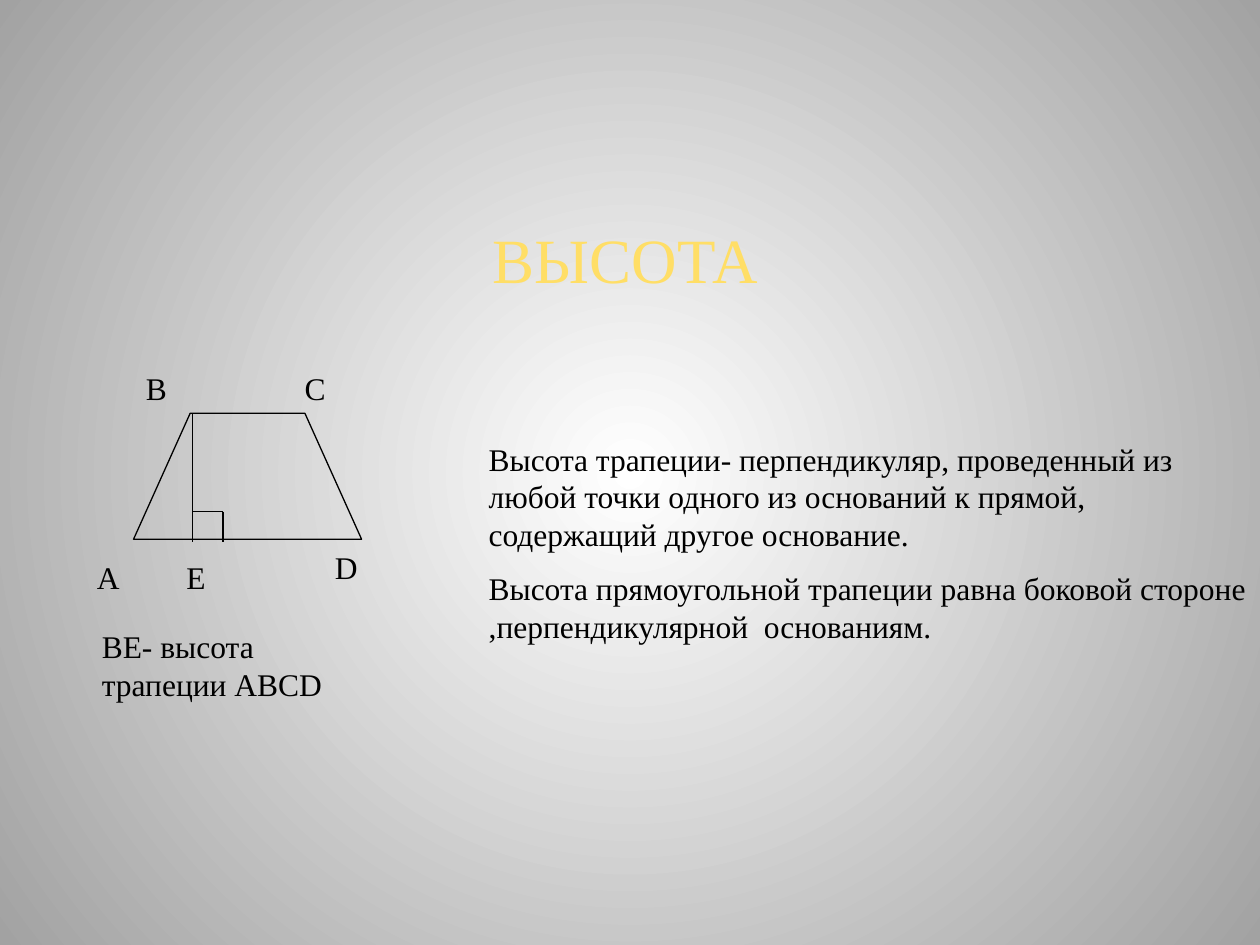
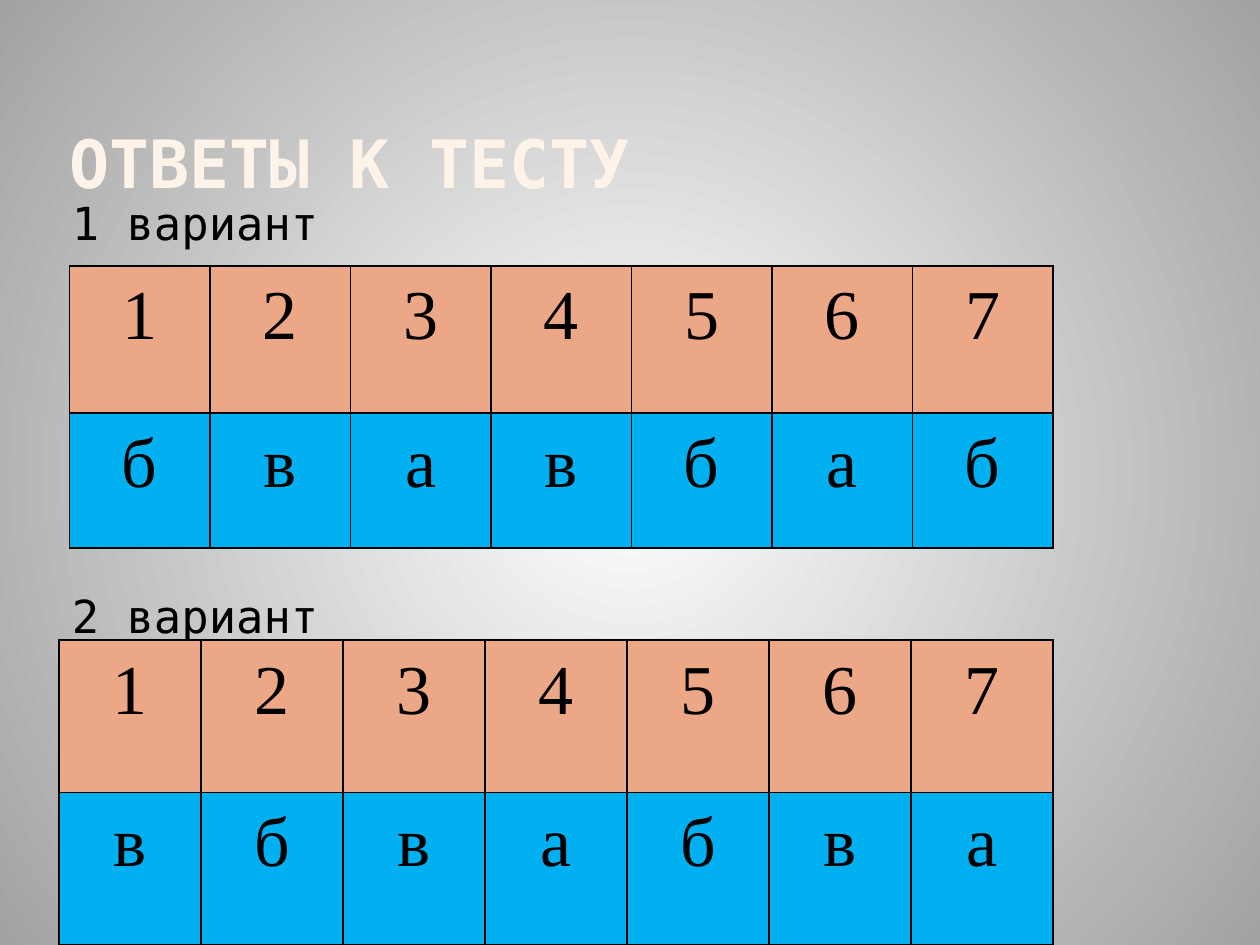
from dataclasses import dataclass

from lxml import etree
from pptx import Presentation
from pptx.dml.color import RGBColor
from pptx.enum.shapes import MSO_CONNECTOR
from pptx.enum.text import MSO_ANCHOR, MSO_AUTO_SIZE, PP_ALIGN
from pptx.oxml.ns import qn
from pptx.util import Inches, Pt

STRAIGHT = MSO_CONNECTOR.STRAIGHT
LEFT, CENTER = PP_ALIGN.LEFT, PP_ALIGN.CENTER
TOP, BOTTOM = MSO_ANCHOR.TOP, MSO_ANCHOR.BOTTOM
NO_FIT, GROW = MSO_AUTO_SIZE.NONE, MSO_AUTO_SIZE.SHAPE_TO_FIT_TEXT
TITLE_AND_CONTENT, TITLE_ONLY = 1, 5

# The slide is a grid of 100 columns by 75 rows
COLUMNS, ROWS = 100, 75
UNIT = Inches(0.1)


@dataclass(frozen=True)
class Theme:
    serif: str = "Times New Roman"
    mono: str = "DejaVu Sans Mono"
    ink: str = "000000"
    heading: str = "FFDE66"
    number_fill: str = "EBA786"
    answer_fill: str = "00B0F0"
    background: tuple = ((0, "FFFFFF"), (100, "A2A2A2"))
    shine: tuple = ((0, "FEF7F1"), (10, "FEF3E8"), (49, "FBCF9C"),
                    (50, "F9B94C"), (100, "FEF3E8"))
    text_size: int = 18
    heading_size: int = 36
    title_size: int = 38
    list_size: int = 26
    cell_size: int = 40
    thin: float = 0.75
    border: float = 1


THEME = Theme()


def grid(*lengths):
    """Turn grid units into slide lengths."""
    return [round(length * UNIT) for length in lengths]


def child(parent, tag, **attributes):
    return etree.SubElement(parent, qn(tag), attributes)


# Paint and type
def paint_gradient(owner, fill, stops, radial=False):
    fill.gradient()
    gradient = owner.find(".//" + qn("a:gradFill"))
    for part in list(gradient):
        gradient.remove(part)
    stop_list = child(gradient, "a:gsLst")
    for position, color in stops:
        stop = child(stop_list, "a:gs", pos=str(position * 1000))
        child(stop, "a:srgbClr", val=color)
    if radial:
        path = child(gradient, "a:path", path="circle")
        child(path, "a:fillToRect", l="50000", t="50000", r="50000", b="50000")
    else:
        child(gradient, "a:lin", ang="5400000", scaled="0")


def style_font(font, name, size, color=THEME.ink, bold=False):
    font.name, font.size, font.bold = name, Pt(size), bold
    font.color.rgb = RGBColor.from_string(color)


def write(text_frame, lines, name, size, color=THEME.ink, align=LEFT, gap=0, bold=False):
    """Fill a frame with one paragraph per line, with a gap between them."""
    text_frame.text = "\n".join(lines)
    for index, paragraph in enumerate(text_frame.paragraphs):
        paragraph.alignment = align
        paragraph.space_before = Pt(gap if index else 0)
        for run in paragraph.runs:
            style_font(run.font, name, size, color, bold)


# Kinds of element
def place(shape, left, top, width, height):
    shape.left, shape.top, shape.width, shape.height = grid(left, top, width, height)


def add_title(slide, text, box, name, size, color=THEME.ink, align=LEFT,
              anchor=TOP, wrap=True, bold=False):
    title = slide.shapes.title
    place(title, *box)
    frame = title.text_frame
    frame.auto_size, frame.word_wrap, frame.vertical_anchor = NO_FIT, wrap, anchor
    write(frame, [text], name, size, color, align, bold=bold)
    return title


def add_text(shapes, lines, box):
    frame = shapes.add_textbox(*grid(*box)).text_frame
    frame.word_wrap, frame.auto_size = True, GROW
    write(frame, lines, THEME.serif, THEME.text_size, gap=THEME.text_size / 2)


def add_line(shapes, start, end):
    line = shapes.add_connector(STRAIGHT, *grid(*start, *end))
    line.line.color.rgb = RGBColor.from_string(THEME.ink)
    line.line.width = Pt(THEME.thin)
    child(line.element.spPr, "a:effectLst")


def add_outline(shapes, points):
    builder = shapes.build_freeform(*grid(*points[0]))
    builder.add_line_segments([grid(*point) for point in points[1:]], close=True)
    outline = builder.convert_to_shape()
    outline.shadow.inherit = False
    outline.fill.background()
    outline.line.color.rgb = RGBColor.from_string(THEME.ink)
    outline.line.width = Pt(THEME.thin)


def style_cell(cell, text, color):
    cell.margin_left = cell.margin_right = Inches(0.07)
    cell.margin_top = cell.margin_bottom = 0
    write(cell.text_frame, [text], THEME.serif, THEME.cell_size, align=CENTER)
    cell.text_frame.paragraphs[0].line_spacing = 1.15
    properties = cell._tc.get_or_add_tcPr()
    for side in ("a:lnL", "a:lnR", "a:lnT", "a:lnB"):
        border = child(properties, side, w=str(Pt(THEME.border)))
        child(child(border, "a:solidFill"), "a:srgbClr", val=THEME.ink)
    cell.fill.solid()
    cell.fill.fore_color.rgb = RGBColor.from_string(color)


def add_answer_table(slide, answers, left, top, width, row_heights):
    count = len(answers)
    numbers = [str(number) for number in range(1, count + 1)]
    box = grid(left, top, width, sum(row_heights))
    table = slide.shapes.add_table(2, count, *box).table
    table.first_row = table.horz_banding = False
    for column in table.columns:
        column.width = box[2] // count
    contents = ((numbers, THEME.number_fill), (answers, THEME.answer_fill))
    for row, height, (texts, color) in zip(table.rows, grid(*row_heights), contents):
        row.height = height
        for cell, text in zip(row.cells, texts):
            style_cell(cell, text, color)


# Slides
def build_height_slide(presentation):
    slide = presentation.slides.add_slide(presentation.slide_layouts[TITLE_ONLY])
    add_title(slide, "ВЫСОТА", (34.3, 17, 30.7, 3.4), THEME.serif, THEME.heading_size,
              THEME.heading, CENTER, wrap=False)

    # Trapezoid with its height and vertex labels
    base, top, foot, mark = 42.8, 32.8, 15.3, 2.4
    line_end = base + 0.2
    figure = slide.shapes.add_group_shape().shapes
    add_outline(figure, [(10.6, base), (15.1, top), (24.2, top), (28.7, base)])
    add_line(figure, (foot, top), (foot, line_end))
    labels = {"A": (6.7, 43.8, 3.9), "E": (13.8, 43.8, 3.9), "D": (25.6, 43, 3.9),
              "B": (10.6, 28.8, 4.7), "C": (23.2, 28.8, 7.1)}
    for letter, (left, label_top, width) in labels.items():
        add_text(figure, [letter], (left, label_top, width, 4))

    # Definition and caption
    add_text(slide.shapes, [
        "Высота трапеции- перпендикуляр, проведенный из любой точки одного "
        "из оснований к прямой, содержащий другое основание.",
        "Высота прямоугольной трапеции равна боковой стороне "
        ",перпендикулярной  основаниям.",
    ], (37.8, 34.4, 62.2, 17.5))
    add_text(slide.shapes, ["ВЕ- высота трапеции АВСD"], (7.1, 49.3, 24.4, 7))

    # Right angle mark
    corner = (foot + mark, line_end - mark)
    add_line(slide.shapes, (foot, line_end - mark), corner)
    add_line(slide.shapes, corner, (foot + mark, line_end))


def build_answers_slide(presentation):
    slide = presentation.slides.add_slide(presentation.slide_layouts[TITLE_AND_CONTENT])
    title = add_title(slide, "ОТВЕТЫ К ТЕСТУ", (5, 3.5, 79.2, 12.5), THEME.mono,
                      THEME.title_size, anchor=BOTTOM, bold=True)
    frame = title.text_frame
    frame.margin_left = frame.margin_right = Inches(0.05)
    frame.margin_top = frame.margin_bottom = 0
    paint_gradient(title.element, frame.paragraphs[0].runs[0].font.fill, THEME.shine)

    # Variant headings, spaced to stand above their tables
    body = slide.placeholders[1]
    place(body, 4.7, 15, 79.2, 53)
    body.text_frame.auto_size = NO_FIT
    write(body.text_frame, ["1 вариант", "2 вариант"], THEME.mono, THEME.list_size, gap=193)
    for paragraph in body.text_frame.paragraphs:
        properties = paragraph._p.get_or_add_pPr()
        properties.set("marL", str(Inches(0.3)))
        properties.set("indent", str(-Inches(0.3)))
        child(properties, "a:buNone")

    add_answer_table(slide, "бвавбаб", 5.5, 21.1, 78.1, (11.7, 10.7))
    add_answer_table(slide, "вбвабва", 4.7, 50.8, 78.9, (12.1, 12.1))


def main():
    presentation = Presentation()
    presentation.slide_width, presentation.slide_height = grid(COLUMNS, ROWS)
    master = presentation.slide_master
    paint_gradient(master.element, master.background.fill, THEME.background, radial=True)
    build_height_slide(presentation)
    build_answers_slide(presentation)
    presentation.save("out.pptx")


if __name__ == "__main__":
    main()
